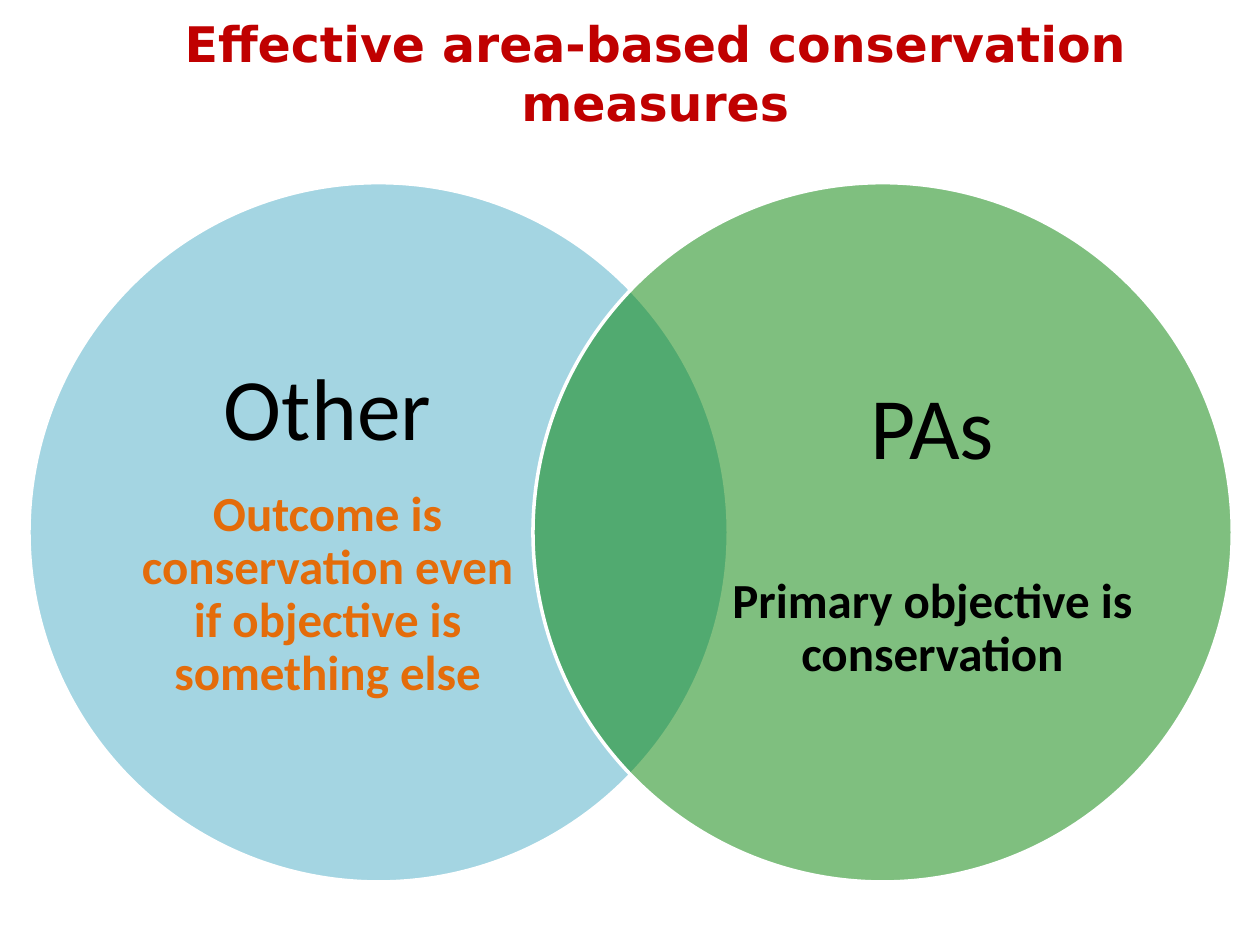
from lxml import etree
from pptx import Presentation
from pptx.dml.color import RGBColor
from pptx.enum.shapes import MSO_SHAPE
from pptx.enum.text import MSO_ANCHOR, PP_ALIGN
from pptx.oxml.ns import qn
from pptx.util import Inches, Pt

OVAL = MSO_SHAPE.OVAL
CENTER = PP_ALIGN.CENTER
MIDDLE = MSO_ANCHOR.MIDDLE
BLACK = "000000"


def rgb(code):
    return RGBColor.from_string(code)


class Board:
    """Holds the style and the current slide."""
    body_font = "Calibri"
    title_font = "DejaVu Sans"
    size = 5.55
    top = 1.45

    def __init__(self, slide):
        self.slide = slide

    def circle(self, left, color):
        """Draw a half-transparent circle with a white rim."""
        oval = self.slide.shapes.add_shape(
            OVAL, Inches(left), Inches(self.top),
            Inches(self.size), Inches(self.size))
        oval.shadow.inherit = False
        oval.fill.solid()
        oval.fill.fore_color.rgb = rgb(color)
        tint = oval.element.spPr.find(qn("a:solidFill")).find(qn("a:srgbClr"))
        etree.SubElement(tint, qn("a:alpha"), val="50000")
        oval.line.color.rgb = rgb("FFFFFF")
        oval.line.width = Pt(2)

    def box(self, left, top, width, height):
        area = self.slide.shapes.add_textbox(
            Inches(left), Inches(top), Inches(width), Inches(height))
        area.text_frame.word_wrap = True
        return area.text_frame

    def set_text(self, para, text, font, size, color, bold):
        para.text = text
        para.alignment = CENTER
        para.font.name = font
        para.font.size = Pt(size)
        para.font.color.rgb = rgb(color)
        para.font.bold = bold

    def title(self, text):
        frame = self.box(0.91, 0.06, 8.58, 1.04)
        self.set_text(frame.paragraphs[0], text, self.title_font, 28,
                      "C00000", True)

    def label(self, left, head, note, color, gap):
        """Set a heading and, gap points below it, a bold note."""
        frame = self.box(left, 2.11, 3.2, 4.24)
        frame.vertical_anchor = MIDDLE
        frame.margin_left = frame.margin_right = 0
        frame.margin_top = frame.margin_bottom = 0
        first, last = frame.paragraphs[0], frame.add_paragraph()
        self.set_text(first, head, self.body_font, 50, BLACK, False)
        self.set_text(last, note, self.body_font, 28, color, True)
        first.line_spacing = last.line_spacing = 0.9
        first.space_after = Pt(gap)


def main():
    deck = Presentation()
    deck.slide_width, deck.slide_height = Inches(10), Inches(7.5)
    board = Board(deck.slides.add_slide(deck.slide_layouts[6]))
    board.circle(0.23, "4BACC6")
    board.label(1, "Other",
                "Outcome is conservation even if objective is something else",
                "E46C0A", 17)
    board.circle(4.23, "008000")
    board.label(5.8, "PAs", "Primary objective is conservation", BLACK, 56)
    board.title("Effective area-based conservation measures")
    deck.save("out.pptx")


if __name__ == "__main__":
    main()
